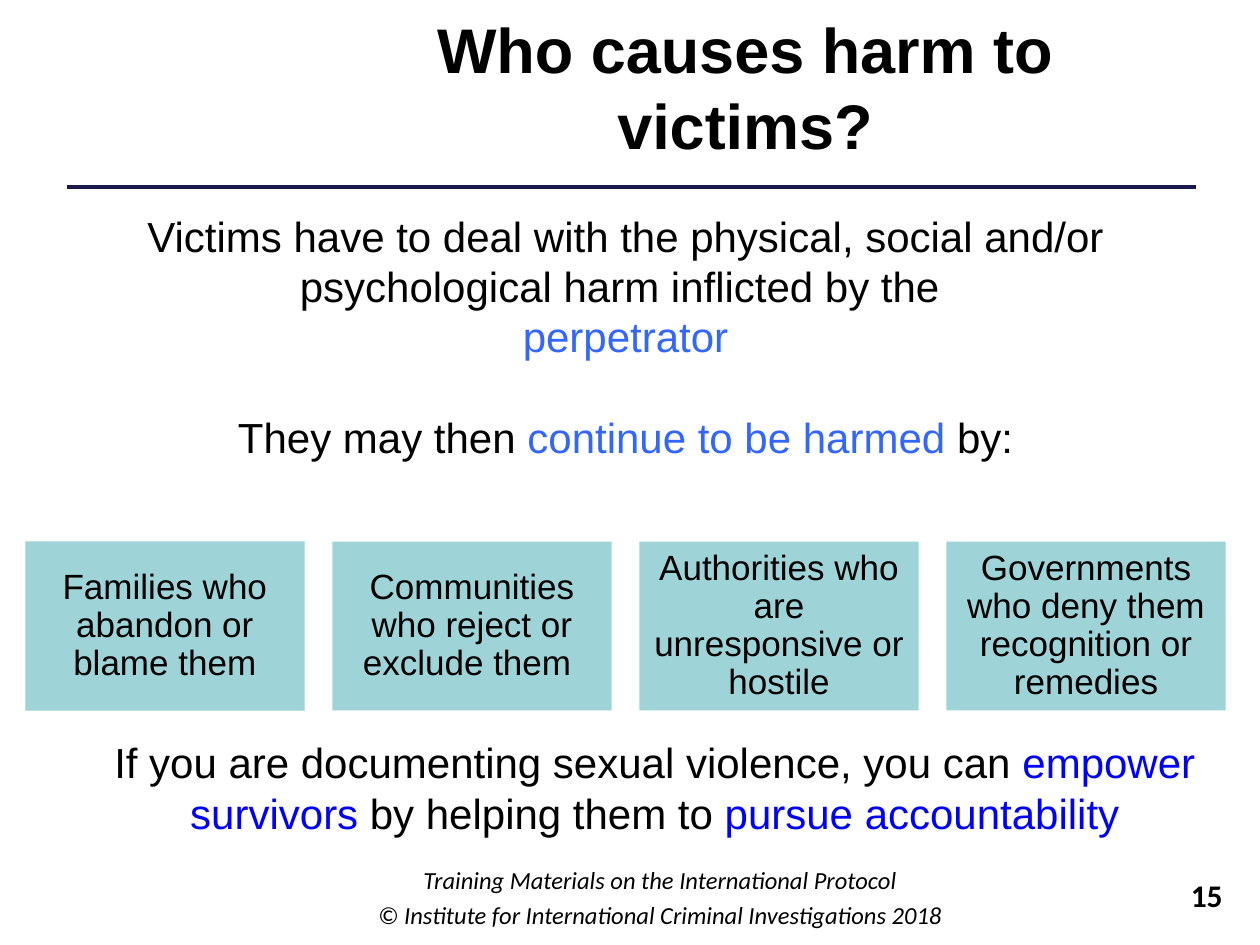
from dataclasses import dataclass

from lxml import etree
from pptx import Presentation
from pptx.dml.color import RGBColor
from pptx.enum.shapes import MSO_CONNECTOR, MSO_SHAPE
from pptx.enum.text import MSO_ANCHOR, MSO_AUTO_SIZE, PP_ALIGN
from pptx.oxml.ns import qn
from pptx.util import Cm, Pt

CENTER, RIGHT = PP_ALIGN.CENTER, PP_ALIGN.RIGHT
TOP, MIDDLE = MSO_ANCHOR.TOP, MSO_ANCHOR.MIDDLE
NO_AUTOSIZE = MSO_AUTO_SIZE.NONE
STRAIGHT, RECTANGLE = MSO_CONNECTOR.STRAIGHT, MSO_SHAPE.RECTANGLE


@dataclass(frozen=True)
class Theme:
    """Colours, fonts and type sizes of the slide."""
    black: str = "000000"
    navy: str = "19194D"
    sky: str = "3366FF"
    blue: str = "0000FF"
    teal: str = "9ED3D7"
    pale_teal: str = "BBE0E3"
    body_font: str = "Arial"
    footer_font: str = "Calibri"
    title_size: int = 36
    body_size: int = 24
    box_size: int = 20
    number_size: int = 18
    footer_size: int = 14


THEME = Theme()


def add_run(paragraph, text, color=THEME.black, size=THEME.body_size,
            font=THEME.body_font, bold=False, italic=False):
    """Append formatted text to a paragraph."""
    run = paragraph.add_run()
    run.text = text
    run.font.name = font
    run.font.size = Pt(size)
    run.font.bold = bold
    run.font.italic = italic
    run.font.color.rgb = RGBColor.from_string(color)


class SlideBuilder:
    """Places styled elements on the current slide."""

    def __init__(self, slide, theme):
        self.slide = slide
        self.theme = theme

    def fill_frame(self, frame, paragraphs, align=CENTER, anchor=TOP, gaps=None,
                   line_spacing=None, **style):
        """Write paragraphs of (text, colour) pieces into a text frame."""
        frame.word_wrap = True
        frame.auto_size = NO_AUTOSIZE
        frame.vertical_anchor = anchor
        for index, pieces in enumerate(paragraphs):
            paragraph = frame.add_paragraph() if index else frame.paragraphs[0]
            paragraph.alignment = align
            paragraph.line_spacing = line_spacing
            paragraph.space_before = Pt((gaps or {}).get(index, 0))
            for text, color in pieces:
                add_run(paragraph, text, color=color, **style)

    def title(self, text, left, top, width, height):
        """Move the title placeholder and write the title."""
        shape = self.slide.shapes.title
        shape.left, shape.top = Cm(left), Cm(top)
        shape.width, shape.height = Cm(width), Cm(height)
        self.fill_frame(shape.text_frame, [[(text, self.theme.black)]],
                        anchor=MIDDLE, size=self.theme.title_size, bold=True)

    def text(self, paragraphs, left, top, width, height, **style):
        """Add a text box."""
        shape = self.slide.shapes.add_textbox(Cm(left), Cm(top), Cm(width), Cm(height))
        self.fill_frame(shape.text_frame, paragraphs, **style)

    def rule(self, left, right, top, weight):
        """Add a horizontal line."""
        line = self.slide.shapes.add_connector(
            STRAIGHT, Cm(left), Cm(top), Cm(right), Cm(top))
        line.line.color.rgb = RGBColor.from_string(self.theme.navy)
        line.line.width = Pt(weight)
        etree.SubElement(line._element.spPr, qn("a:effectLst"))

    def box(self, text, left, top, width, height, side_inset=0.18, outline=None):
        """Add a filled box with centred text."""
        shape = self.slide.shapes.add_shape(
            RECTANGLE, Cm(left), Cm(top), Cm(width), Cm(height))
        shape.shadow.inherit = False
        shape.fill.solid()
        shape.fill.fore_color.rgb = RGBColor.from_string(self.theme.teal)
        if outline:
            shape.line.color.rgb = RGBColor.from_string(outline)
            shape.line.width = Pt(0.75)
        else:
            shape.line.fill.background()
        frame = shape.text_frame
        frame.margin_left = frame.margin_right = Cm(side_inset)
        frame.margin_top = frame.margin_bottom = Cm(0.18)
        self.fill_frame(frame, [[(text, self.theme.black)]], anchor=MIDDLE,
                        line_spacing=0.9, size=self.theme.box_size)


def main():
    """Build and save the slide."""
    presentation = Presentation()
    presentation.slide_width, presentation.slide_height = Cm(25.4), Cm(19.05)
    slide = presentation.slides.add_slide(presentation.slide_layouts[5])
    builder = SlideBuilder(slide, THEME)
    black, sky, blue = THEME.black, THEME.sky, THEME.blue

    builder.rule(1.35, 24.1, 3.77, 2.5)
    builder.title("Who causes harm to victims?", 5.9, 0.08, 18.24, 3.33)
    builder.text(
        [[("Training Materials on the International Protocol", black)],
         [("© Institute for International Criminal Investigations 2018", black)]],
        6.91, 17.32, 12.8, 1.35, gaps={1: 2.8},
        font=THEME.footer_font, size=THEME.footer_size, italic=True)
    builder.text([[("15", black)]], 23.5, 17.53, 1.4, 1.14, align=RIGHT,
                 font=THEME.footer_font, size=THEME.number_size, bold=True)
    builder.text(
        [[("Victims have to deal with the physical, social and/or psychological "
           "harm inflicted by the ", black)],
         [("perpetrator", sky)],
         [("They may then ", black), ("continue to be harmed ", sky), ("by:", black)]],
        0.51, 4.11, 24.2, 5.38, gaps={2: 29})
    builder.text(
        [[("If you are documenting sexual violence, you can ", black),
          ("empower survivors", blue), (" by helping them to ", black),
          ("pursue accountability", blue)]],
        1.5, 14.73, 23.4, 2.31)

    sources_of_harm = [
        ("Families who abandon or blame them", {"outline": THEME.pale_teal}),
        ("Communities who reject or exclude them ", {}),
        ("Authorities who are unresponsive or hostile", {"side_inset": 0.13}),
        ("Governments who deny them recognition or remedies", {}),
    ]
    box_width, box_gap = 5.63, 0.56
    for index, (text, options) in enumerate(sources_of_harm):
        left = 0.51 + index * (box_width + box_gap)
        builder.box(text, left, 10.92, box_width, 3.4, **options)

    presentation.save("out.pptx")


if __name__ == "__main__":
    main()
